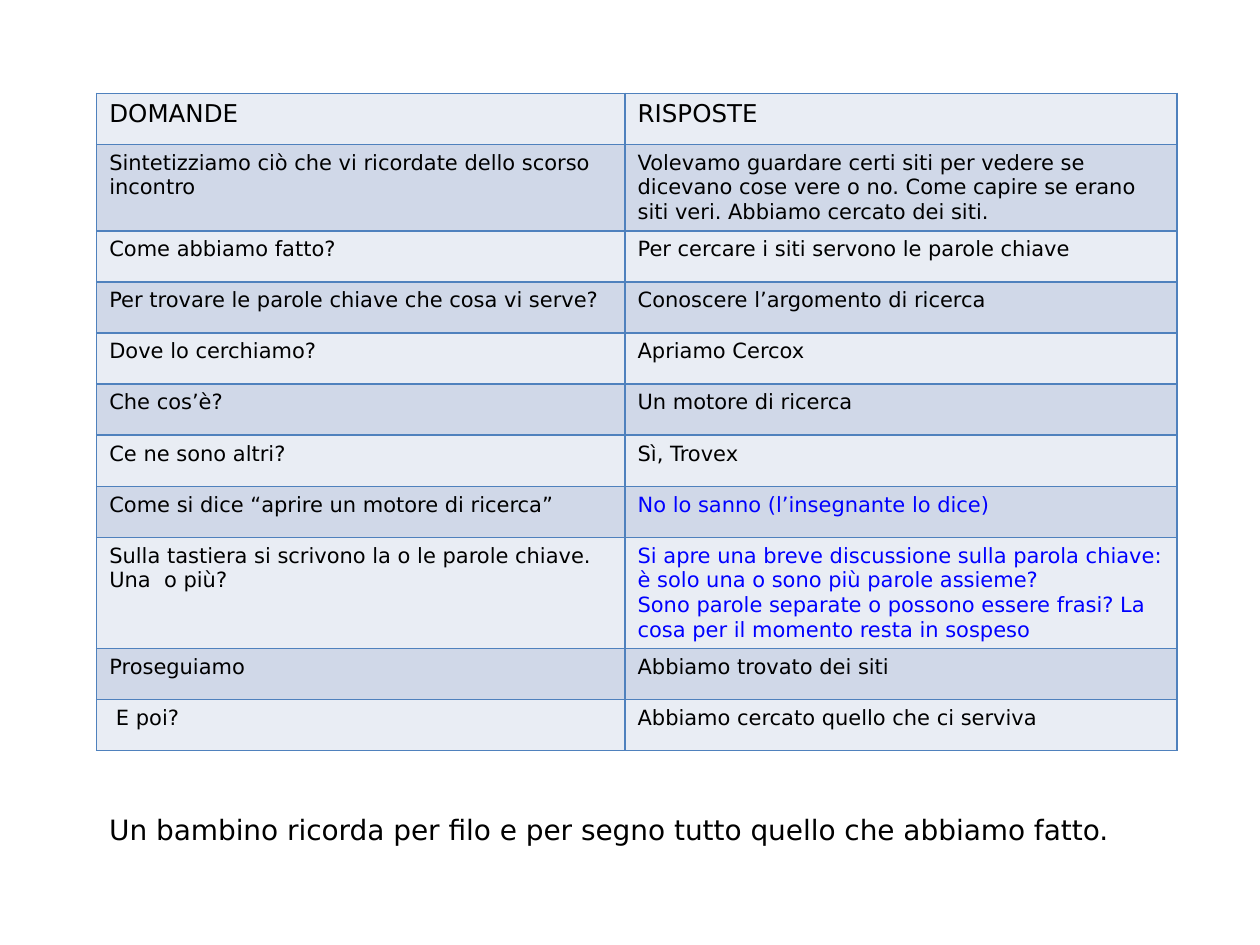
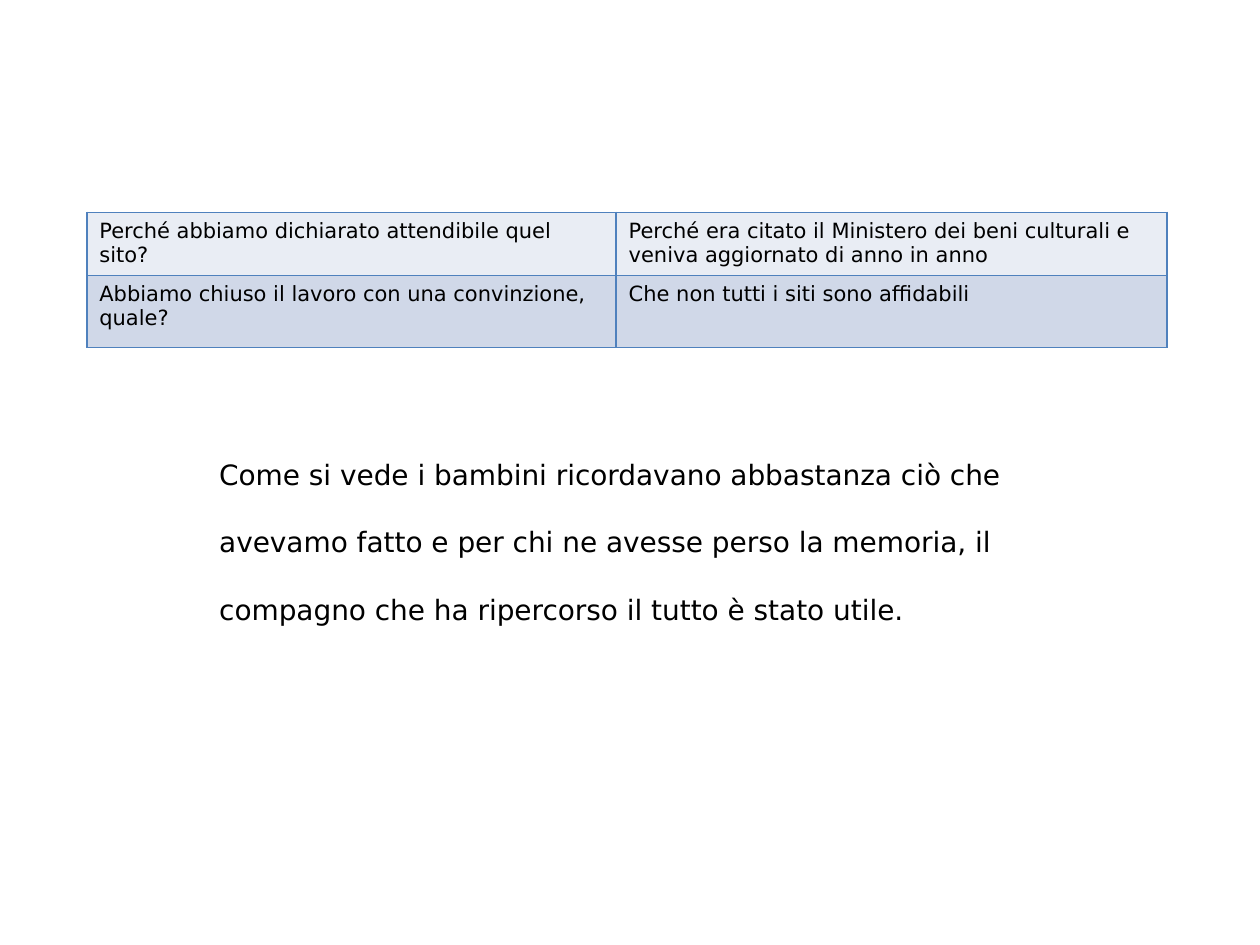
from lxml.etree import SubElement
from pptx import Presentation
from pptx.dml.color import RGBColor
from pptx.enum.text import MSO_AUTO_SIZE
from pptx.oxml.ns import qn
from pptx.util import Cm, Pt

FONT = "DejaVu Sans"
BLACK, BLUE, EDGE = "000000", "0000FF", "4F81BD"
BANDS = ["E9EDF4", "D0D8E8"]
ROW = 1.03

# A row is question, answer and, if not black, the colour of the answer.
# A line break inside a text starts a new paragraph.
RECALL = [
    ("DOMANDE", "RISPOSTE"),
    ("Sintetizziamo ciò che vi ricordate dello scorso incontro",
     "Volevamo guardare certi siti per vedere se dicevano cose vere o no. "
     "Come capire se erano siti veri. Abbiamo cercato dei siti."),
    ("Come abbiamo fatto?", "Per cercare i siti servono le parole chiave"),
    ("Per trovare le parole chiave che cosa vi serve?",
     "Conoscere l’argomento di ricerca"),
    ("Dove lo cerchiamo?", "Apriamo Cercox"),
    ("Che cos’è?", "Un motore di ricerca"),
    ("Ce ne sono altri?", "Sì, Trovex"),
    ("Come si dice “aprire un motore di ricerca”",
     "No lo sanno (l’insegnante lo dice)", BLUE),
    ("Sulla tastiera si scrivono la o le parole chiave.\nUna  o più?",
     "Si apre una breve discussione sulla parola chiave: "
     "è solo una o sono più parole assieme?\n"
     "Sono parole separate o possono essere frasi? "
     "La cosa per il momento resta in sospeso", BLUE),
    ("Proseguiamo", "Abbiamo trovato dei siti"),
    (" E poi?", "Abbiamo cercato quello che ci serviva"),
]
CLOSE = [
    ("Perché abbiamo dichiarato attendibile quel sito?",
     "Perché era citato il Ministero dei beni culturali e "
     "veniva aggiornato di anno in anno"),
    ("Abbiamo chiuso il lavoro con una convinzione, quale?",
     "Che non tutti i siti sono affidabili"),
]

SLIDES = [
    {"rows": RECALL, "head": True, "at": (1.95, 1.88),
     "cols": (10.65, 11.13), "heights": [ROW] * len(RECALL),
     "note": "Un bambino ricorda per filo e per segno tutto quello "
             "che abbiamo fatto.",
     "box": (1.95, 16.26, 21.78, 0.94)},
    {"rows": CLOSE, "head": False, "at": (1.75, 4.28),
     "cols": (10.67, 11.11), "heights": [ROW, 1.45],
     "note": "Come si vede i bambini ricordavano abbastanza ciò che\n"
             "avevamo fatto e per chi ne avesse perso la memoria, il\n"
             "compagno che ha ripercorso il tutto è stato utile.",
     "box": (4.17, 9.09, 16.31, 3.68)},
]


def paint(target, color):
    target.rgb = RGBColor.from_string(color)


def write(frame, text, size, color=BLACK, gap=0):
    """Write one paragraph per line, with gap points between them."""
    for i, line in enumerate(text.split("\n")):
        para = frame.add_paragraph() if i else frame.paragraphs[0]
        para.space_before = Pt(gap if i else 0)
        run = para.add_run()
        run.text = line
        run.font.name, run.font.size = FONT, Pt(size)
        paint(run.font.color, color)


def edge(cell):
    props = cell._tc.get_or_add_tcPr()
    for side in ("lnL", "lnR", "lnT", "lnB"):
        line = SubElement(props, qn("a:" + side), w=str(Pt(1)))
        fill = SubElement(line, qn("a:solidFill"))
        SubElement(fill, qn("a:srgbClr"), val=EDGE)


def add_grid(slide, rows, head, at, cols, heights):
    x, y = map(Cm, at)
    shape = slide.shapes.add_table(len(rows), len(cols), x, y,
                                   Cm(sum(cols)), Cm(sum(heights)))
    table = shape.table
    table.first_row = table.horz_banding = False
    for col, width in zip(table.columns, cols):
        col.width = Cm(width)
    for r, (ask, reply, *tint) in enumerate(rows):
        table.rows[r].height = Cm(heights[r])
        size = 14 if head and r == 0 else 12
        colors = [BLACK, *(tint or [BLACK])]
        for c, text in enumerate((ask, reply)):
            cell = table.cell(r, c)
            write(cell.text_frame, text, size, colors[c])
            edge(cell)
            cell.fill.solid()
            paint(cell.fill.fore_color, BANDS[r % 2])


def add_note(slide, text, box):
    frame = slide.shapes.add_textbox(*map(Cm, box)).text_frame
    frame.word_wrap = True
    frame.auto_size = MSO_AUTO_SIZE.SHAPE_TO_FIT_TEXT
    write(frame, text, 16, gap=19.6)


def main():
    deck = Presentation()
    deck.slide_width, deck.slide_height = Cm(25.4), Cm(19.05)
    for page in SLIDES:
        slide = deck.slides.add_slide(deck.slide_layouts[6])
        add_grid(slide, page["rows"], page["head"], page["at"],
                 page["cols"], page["heights"])
        add_note(slide, page["note"], page["box"])
    deck.save("out.pptx")


if __name__ == "__main__":
    main()
